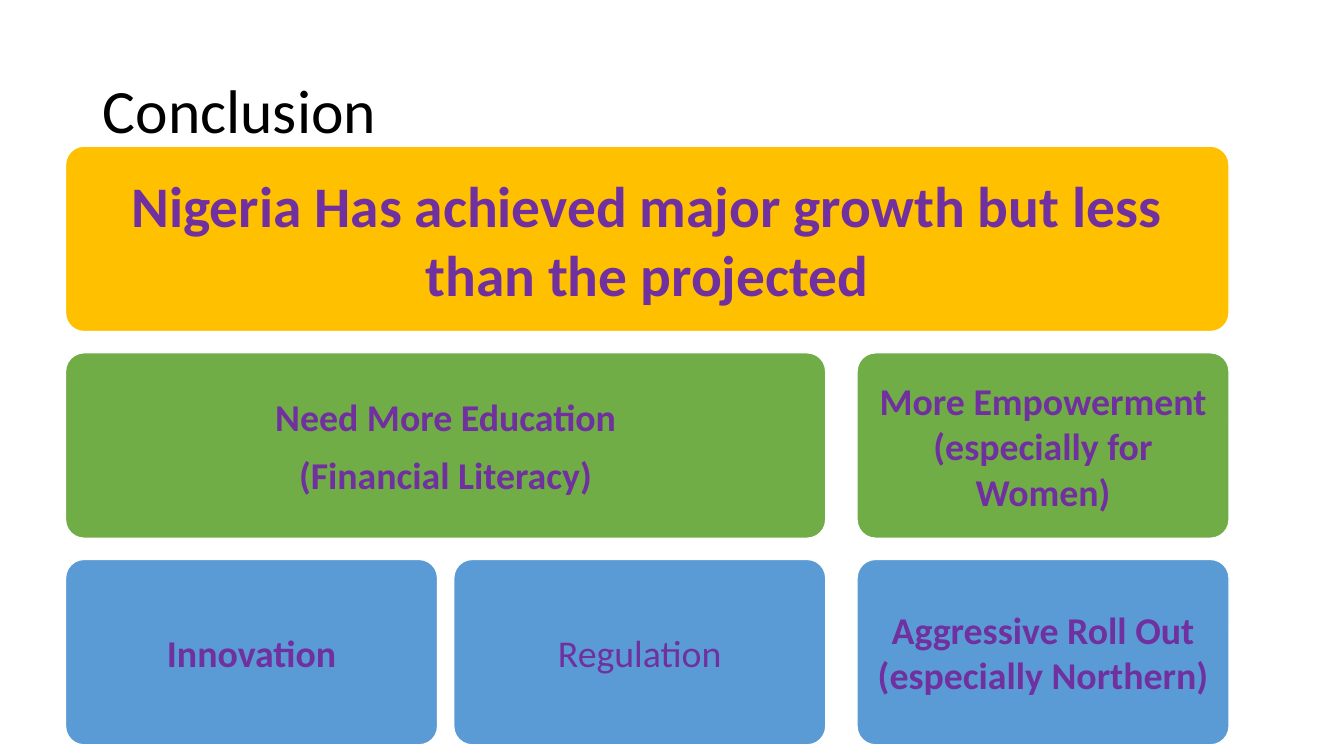
from pptx import Presentation
from pptx import util as u
from pptx.dml.color import RGBColor
from pptx.enum import shapes, text

BLACK = RGBColor(0x00, 0x00, 0x00)
WHITE = RGBColor(0xFF, 0xFF, 0xFF)
GOLD = RGBColor(0xFF, 0xC0, 0x00)
GREEN = RGBColor(0x70, 0xAD, 0x47)
BLUE = RGBColor(0x5B, 0x9B, 0xD5)
PURPLE = RGBColor(0x70, 0x30, 0xA0)

COLS = (0.65, 4.5, 8.5)
WIDE = 3.69
TOP, STEP, HIGH = 1.45, 2.05, 1.84
SIDES = ("left", "top", "right", "bottom")

CARDS = (
    (0, 0, 2, GOLD, 41, True,
     ["Nigeria Has achieved major growth but less than the projected"]),
    (1, 0, 1, GREEN, 27, True,
     ["Need More Education", "(Financial Literacy)"]),
    (2, 0, 0, BLUE, 27, True, ["Innovation"]),
    (2, 1, 1, BLUE, 27, False, ["Regulation"]),
    (1, 2, 2, GREEN, 27, True, ["More Empowerment (especially for Women)"]),
    (2, 2, 2, BLUE, 27, True, ["Aggressive Roll Out (especially Northern)"]),
)


def apply(item, form):
    for key, value in form.items():
        setattr(item, key, value)


def style(font, size, color, bold=False):
    apply(font, {"name": "Calibri", "size": u.Pt(size), "bold": bold})
    font.color.rgb = color


def add_title(slide, words):
    title = slide.shapes.title
    apply(title, {"left": u.Inches(0.92), "top": u.Inches(0.4),
                  "width": u.Inches(11.5), "height": u.Inches(1.45)})
    frame = title.text_frame
    apply(frame, {"text": words, "word_wrap": True,
                  "vertical_anchor": text.MSO_ANCHOR.MIDDLE})
    para = frame.paragraphs[0]
    apply(para, {"alignment": text.PP_ALIGN.LEFT, "line_spacing": 0.9})
    style(para.runs[0].font, 44, BLACK)


def add_card(slide, row, first, last, fill, size, bold, lines):
    left = COLS[first]
    width = COLS[last] + WIDE - left
    card = slide.shapes.add_shape(
        shapes.MSO_SHAPE.ROUNDED_RECTANGLE, u.Inches(left),
        u.Inches(TOP + row * STEP), u.Inches(width), u.Inches(HIGH))
    card.shadow.inherit = False
    card.adjustments[0] = 0.1
    card.fill.solid()
    card.fill.fore_color.rgb = fill
    card.line.color.rgb = WHITE
    card.line.width = u.Pt(1)
    frame = card.text_frame
    inset = u.Pt(size * 0.15)
    apply(frame, {"text": "\n".join(lines), "word_wrap": True,
                  "vertical_anchor": text.MSO_ANCHOR.MIDDLE})
    apply(frame, {f"margin_{side}": inset for side in SIDES})
    for para in frame.paragraphs:
        para.alignment = text.PP_ALIGN.CENTER
        style(para.runs[0].font, size, PURPLE, bold)
    for para in frame.paragraphs[:-1]:
        para.space_after = u.Pt(size * 0.35)


def main():
    deck = Presentation()
    apply(deck, {"slide_width": u.Inches(13.33),
                 "slide_height": u.Inches(7.5)})
    slide = deck.slides.add_slide(deck.slide_layouts[5])
    add_title(slide, "Conclusion")
    for card in CARDS:
        add_card(slide, *card)
    deck.save("out.pptx")


if __name__ == "__main__":
    main()
